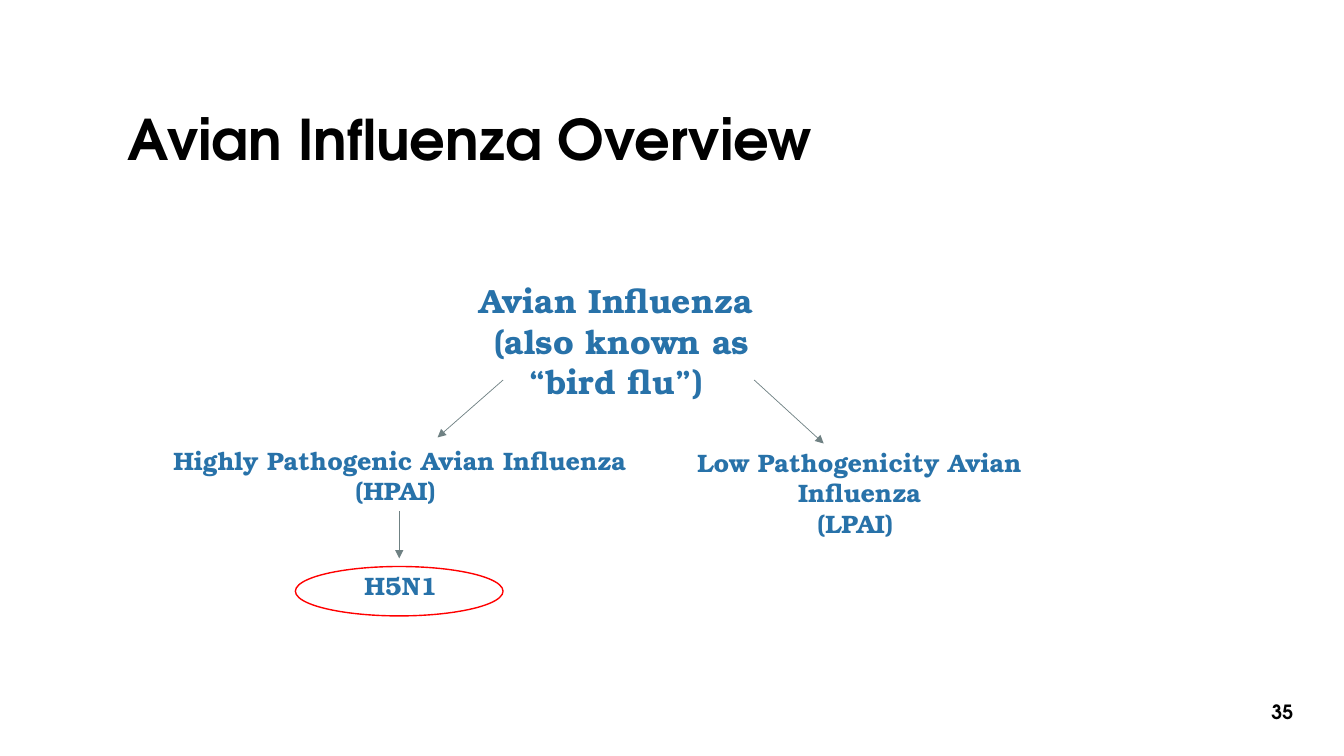
from dataclasses import dataclass

from lxml.etree import SubElement
from pptx import Presentation
from pptx.dml.color import RGBColor
from pptx.enum.shapes import MSO_CONNECTOR, MSO_SHAPE
from pptx.enum.text import MSO_ANCHOR, PP_ALIGN
from pptx.oxml.ns import qn
from pptx.util import Inches, Pt


@dataclass(frozen=True)
class Theme:
    heading_font: str = "TeX Gyre Adventor"
    body_font: str = "TeX Gyre Bonum"
    black: RGBColor = RGBColor(0x00, 0x00, 0x00)
    blue: RGBColor = RGBColor(0x28, 0x72, 0xA9)
    gray: RGBColor = RGBColor(0x6F, 0x81, 0x83)
    red: RGBColor = RGBColor(0xFF, 0x00, 0x00)
    title_size: int = 40
    root_size: int = 24
    branch_size: int = 18
    number_size: int = 14


theme = Theme()

presentation = Presentation()
presentation.slide_width = Inches(13.33)
presentation.slide_height = Inches(7.5)
slide = presentation.slides.add_slide(presentation.slide_layouts[6])


def add_text(text, left, top, width, height, size=theme.branch_size,
             font=theme.body_font, color=theme.blue, align=PP_ALIGN.CENTER,
             anchor=MSO_ANCHOR.TOP, line_spacing=None):
    """Add a bold text box with one paragraph for each line of text."""
    box = slide.shapes.add_textbox(Inches(left), Inches(top), Inches(width), Inches(height))
    frame = box.text_frame
    frame.word_wrap = True
    frame.vertical_anchor = anchor
    frame.text = text
    for paragraph in frame.paragraphs:
        paragraph.alignment = align
        paragraph.line_spacing = line_spacing
        paragraph.font.name = font
        paragraph.font.size = Pt(size)
        paragraph.font.bold = True
        paragraph.font.color.rgb = color


heading = {"font": theme.heading_font, "color": theme.black, "anchor": MSO_ANCHOR.MIDDLE}
add_text("Avian Influenza Overview", 1.17, 0.53, 11, 1.76, size=theme.title_size,
         align=PP_ALIGN.LEFT, line_spacing=0.9, **heading)
add_text("35", 12.37, 6.86, 0.7, 0.4, size=theme.number_size, **heading)

add_text("Avian Influenza \n(also known as “bird flu”) ", 4.34, 2.73, 3.65, 1.31,
         size=theme.root_size)
add_text("Highly Pathogenic Avian Influenza\n(HPAI) ", 1.61, 4.37, 4.71, 0.71)
add_text("Low Pathogenicity Avian Influenza\n(LPAI) ", 6.17, 4.39, 4.71, 1.01)
add_text("H5N1", 1.62, 5.61, 4.71, 0.4)

arrows = [
    (4.99, 3.77, 4.34, 4.34),
    (7.48, 3.77, 8.17, 4.4),
    (3.96, 5.07, 3.96, 5.54),
]
for ends in arrows:
    arrow = slide.shapes.add_connector(MSO_CONNECTOR.STRAIGHT, *map(Inches, ends))
    arrow.line.color.rgb = theme.gray
    arrow.line.width = Pt(0.5)
    SubElement(arrow.line._get_or_add_ln(), qn("a:tailEnd"), type="triangle")
    SubElement(arrow._element.spPr, qn("a:effectLst"))

strain_ring = slide.shapes.add_shape(
    MSO_SHAPE.OVAL, Inches(2.93), Inches(5.62), Inches(2.06), Inches(0.49))
strain_ring.shadow.inherit = False
strain_ring.fill.background()
strain_ring.line.color.rgb = theme.red
strain_ring.line.width = Pt(1)

presentation.save("out.pptx")
